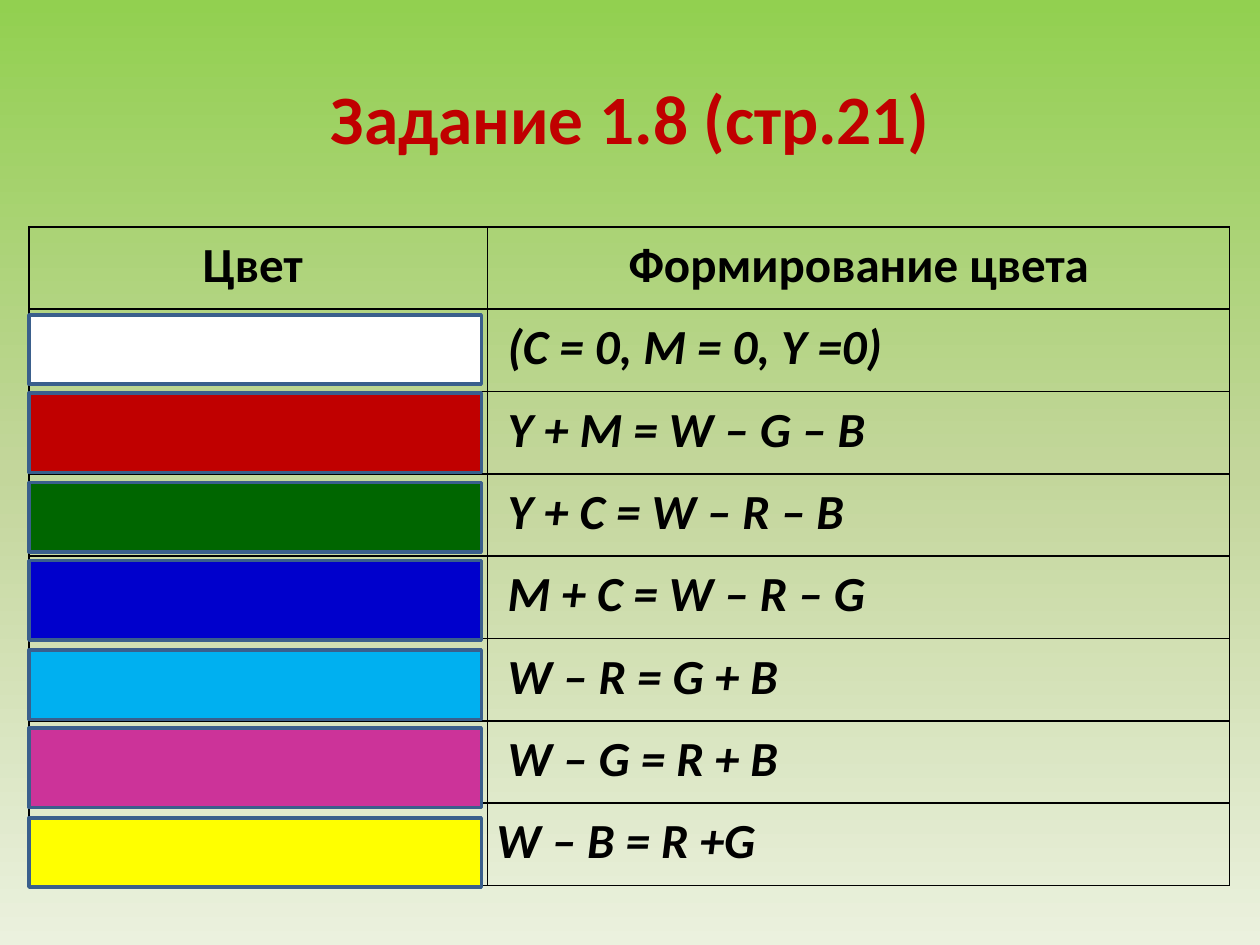
import copy
from dataclasses import dataclass

import lxml.etree
import pptx
import pptx.dml.color
import pptx.enum.shapes
import pptx.enum.text
import pptx.oxml.ns
import pptx.util
from pptx.util import Inches

RGBColor = pptx.dml.color.RGBColor
ALIGN = pptx.enum.text.PP_ALIGN
MIDDLE = pptx.enum.text.MSO_ANCHOR.MIDDLE
qn = pptx.oxml.ns.qn

BLACK = RGBColor(0x00, 0x00, 0x00)
RED = RGBColor(0xC0, 0x00, 0x00)
OUTLINE = RGBColor(0x3A, 0x5F, 0x8C)
BACKDROP = (
    (0.0, RGBColor(0x92, 0xD0, 0x50)),
    (0.5, RGBColor(0xC3, 0xD6, 0x9B)),
    (1.0, RGBColor(0xEB, 0xF1, 0xDE)),
)

LEFT, TABLE_TOP = 0.23, 1.8
COLUMN_WIDTHS = (3.64, 5.89)
TABLE_HEIGHT = 5.23
SWATCH_TOP, SWATCH_WIDTH, PAIR_PITCH = 2.5, 3.59, 1.33
MARGIN, WIDE_MARGIN = 0.07, 0.16


@dataclass
class ColorRule:
    swatch: RGBColor
    formula: str
    indent: float = WIDE_MARGIN


RULES = (
    ColorRule(RGBColor(0xFF, 0xFF, 0xFF), "(C = 0, M = 0, Y =0)"),
    ColorRule(RED, "Y + M = W – G – B"),
    ColorRule(RGBColor(0x00, 0x66, 0x00), "Y + C = W – R – B"),
    ColorRule(RGBColor(0x00, 0x00, 0xCC), "M + C = W – R – G"),
    ColorRule(RGBColor(0x00, 0xB0, 0xF0), "W – R = G + B"),
    ColorRule(RGBColor(0xCC, 0x33, 0x99), "W – G = R + B"),
    ColorRule(RGBColor(0xFF, 0xFF, 0x00), "W – B = R +G", MARGIN),
)


def format_text(paragraph, size: float, color: RGBColor, italic: bool = False) -> None:
    for run in paragraph.runs:
        run.font.name = "Calibri"
        run.font.size = pptx.util.Pt(size)
        run.font.bold = True
        run.font.italic = italic
        run.font.color.rgb = color


def paint_background(slide) -> None:
    fill = slide.background.fill
    fill.gradient()
    fill.gradient_angle = 270
    stop_list = next(slide.element.iter(qn("a:gsLst")))
    stop_list.append(copy.deepcopy(stop_list[0]))
    for stop, (position, color) in zip(fill.gradient_stops, BACKDROP):
        stop.position = position
        stop.color.rgb = color


def frame_cell(cell) -> None:
    """Clear the fill and draw a thin black border on every side."""
    cell.fill.background()
    properties = cell._tc.get_or_add_tcPr()
    for index, side in enumerate(("a:lnL", "a:lnR", "a:lnT", "a:lnB")):
        border = lxml.etree.Element(qn(side), w=str(pptx.util.Pt(1)))
        solid = lxml.etree.SubElement(border, qn("a:solidFill"))
        lxml.etree.SubElement(solid, qn("a:srgbClr"), val=str(BLACK))
        properties.insert(index, border)


def write_cell(cell, text: str, align, left: float = MARGIN,
               right: float = MARGIN, italic: bool = False) -> None:
    cell.margin_left, cell.margin_right = Inches(left), Inches(right)
    cell.margin_top = cell.margin_bottom = 0
    cell.vertical_anchor = pptx.enum.text.MSO_ANCHOR.TOP
    paragraph = cell.text_frame.paragraphs[0]
    paragraph.text = text
    paragraph.alignment = align
    paragraph.line_spacing = 1.15
    format_text(paragraph, 28, BLACK, italic)


def add_color_table(slide) -> None:
    rows = len(RULES) + 1
    table = slide.shapes.add_table(
        rows, len(COLUMN_WIDTHS), Inches(LEFT), Inches(TABLE_TOP),
        Inches(sum(COLUMN_WIDTHS)), Inches(TABLE_HEIGHT)).table
    table.first_row = table.horz_banding = False
    for column, width in zip(table.columns, COLUMN_WIDTHS):
        column.width = Inches(width)
    for cell in table.iter_cells():
        frame_cell(cell)
    write_cell(table.cell(0, 0), "Цвет", ALIGN.CENTER, right=WIDE_MARGIN)
    write_cell(table.cell(0, 1), "Формирование цвета", ALIGN.CENTER)
    for row, rule in enumerate(RULES, start=1):
        write_cell(table.cell(row, 1), rule.formula, ALIGN.LEFT,
                   left=rule.indent, italic=True)


def add_swatch(slide, index: int, color: RGBColor) -> None:
    """Low and tall swatches alternate, in pairs of equal pitch."""
    pair, tall = divmod(index, 2)
    top = SWATCH_TOP + pair * PAIR_PITCH + (0.62 if tall else 0)
    swatch = slide.shapes.add_shape(
        pptx.enum.shapes.MSO_SHAPE.RECTANGLE, Inches(LEFT), Inches(top),
        Inches(SWATCH_WIDTH), Inches(0.63 if tall else 0.55))
    swatch.shadow.inherit = False
    swatch.fill.solid()
    swatch.fill.fore_color.rgb = color
    swatch.line.color.rgb = OUTLINE
    swatch.line.width = pptx.util.Pt(2)


def main() -> None:
    presentation = pptx.Presentation()
    presentation.slide_width, presentation.slide_height = Inches(10), Inches(7.5)
    slide = presentation.slides.add_slide(presentation.slide_layouts[5])
    paint_background(slide)

    # Title
    title = slide.shapes.title
    title.left, title.top = Inches(0.5), Inches(0.3)
    title.width, title.height = Inches(9), Inches(1.25)
    title.text_frame.text = "Задание 1.8 (стр.21)"
    title.text_frame.vertical_anchor = MIDDLE
    heading = title.text_frame.paragraphs[0]
    heading.alignment = ALIGN.CENTER
    format_text(heading, 39.6, RED)

    # Colour formulas with a swatch beside each
    add_color_table(slide)
    for index, rule in enumerate(RULES):
        add_swatch(slide, index, rule.swatch)

    presentation.save("out.pptx")


if __name__ == "__main__":
    main()
